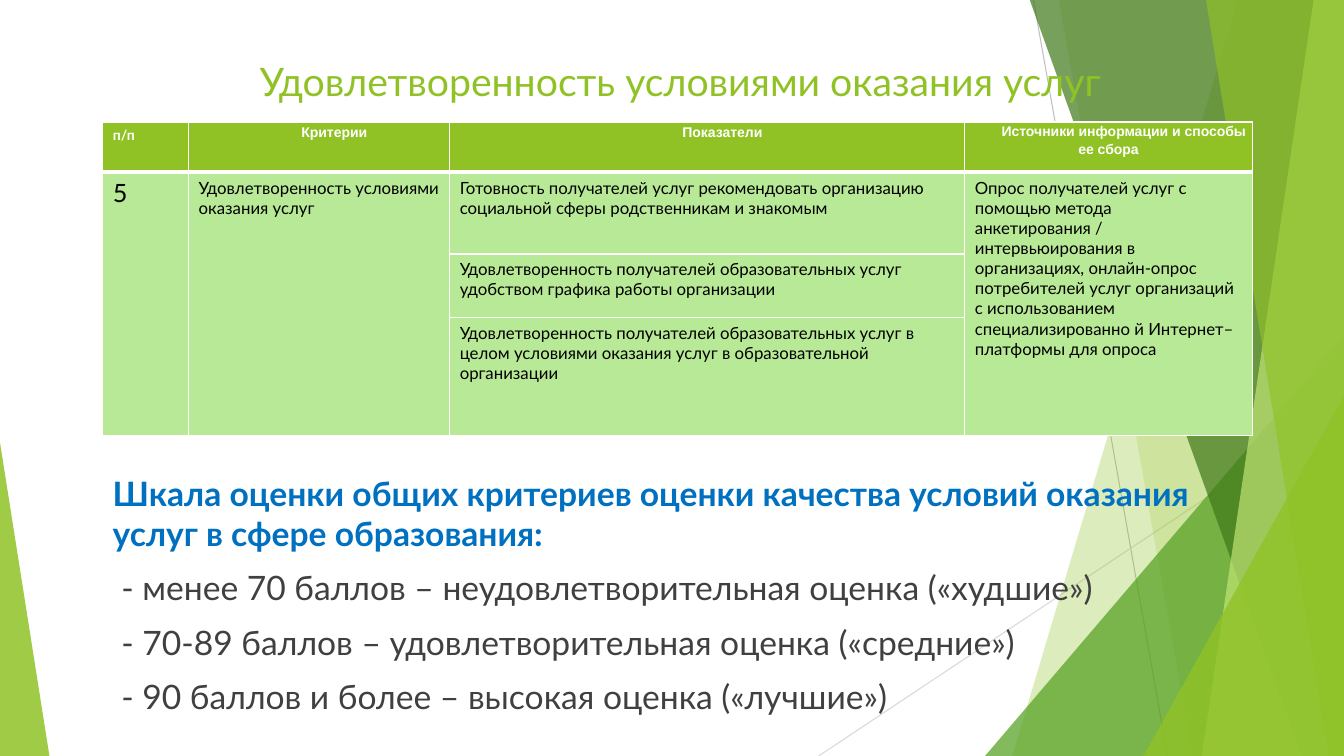
from dataclasses import dataclass

from lxml import etree
from pptx import Presentation
from pptx.dml.color import RGBColor
from pptx.enum.shapes import MSO_CONNECTOR, MSO_SHAPE
from pptx.enum.text import MSO_ANCHOR, PP_ALIGN
from pptx.oxml.ns import qn
from pptx.util import Inches, Pt

STRAIGHT = MSO_CONNECTOR.STRAIGHT
TRIANGLE = MSO_SHAPE.ISOSCELES_TRIANGLE
TOP, BOTTOM = MSO_ANCHOR.TOP, MSO_ANCHOR.BOTTOM
LEFT, CENTER = PP_ALIGN.LEFT, PP_ALIGN.CENTER

WIDTH, HEIGHT = 13.33, 7.5
BLEED_TOP = -0.01
COLORS = {
    "green": "90C226", "leaf": "54A021", "forest": "3F7819", "lime": "C0E474",
    "mint": "B7E996", "blue": "0070C0", "text": "404040", "black": "000000",
    "white": "FFFFFF", "gray": "BFBFBF", "light_gray": "D9D9D9",
}


@dataclass
class Ray:
    start: tuple[float, float]
    end: tuple[float, float]
    color: str


@dataclass
class Band:
    """Area between a slanted edge and the right side of the slide."""
    top_x: float
    bottom_x: float
    color: str
    opacity: int


@dataclass
class Corner:
    """Right triangle standing on the bottom edge; apex is 0 (left) or 1 (right)."""
    left: float
    top: float
    width: float
    apex: int
    color: str
    opacity: int


@dataclass
class Style:
    size: float
    color: str
    bold: bool = False
    font: str = "Lato"
    align: PP_ALIGN = LEFT
    spacing: float = 1.0
    indent: float = 0
    before: float = 0


DECOR = [
    Ray((10.25, 0), (11.58, HEIGHT), "gray"),
    Ray((WIDTH, 4.03), (8.12, HEIGHT), "light_gray"),
    Band(12.28, 10.04, "green", 30),
    Band(10.5, 11.83, "green", 20),
    Corner(9.77, 3.33, 3.56, 1, "leaf", 72),
    Band(10.21, 12.91, "forest", 70),
    Band(13.03, 11.92, "lime", 70),
    Band(11.96, 13.18, "green", 65),
    Corner(11.34, 3.93, 1.99, 1, "green", 80),
    Corner(0, 4.39, 0.49, 0, "green", 85),
]

TITLE = "Удовлетворенность условиями оказания услуг"
COLUMN_WIDTHS = [0.85, 2.59, 5.11, 2.85]
ROW_HEIGHTS = [0.5, 0.81, 0.63, 1.17]
HEADERS = ["п/п", "Критерии", "Показатели", "Источники информации и способы ее сбора"]
CRITERION_NUMBER = "5"
INDICATORS = [
    "Готовность получателей услуг рекомендовать организацию социальной сферы "
    "родственникам и знакомым",
    "Удовлетворенность получателей образовательных услуг удобством графика "
    "работы организации",
    "Удовлетворенность получателей образовательных услуг в целом условиями "
    "оказания услуг в образовательной организации",
]
SOURCES = (
    "Опрос получателей услуг с помощью метода анкетирования / интервьюирования "
    "в организациях, онлайн-опрос потребителей услуг организаций с использованием "
    "специализированно й Интернет– платформы для опроса"
)
SCALE_HEADING = ("Шкала оценки общих критериев оценки качества условий оказания "
                 "услуг в сфере образования:")
SCALE = [
    " - менее 70 баллов – неудовлетворительная оценка («худшие»)",
    " - 70-89 баллов – удовлетворительная оценка («средние»)",
    " - 90 баллов и более – высокая оценка («лучшие»)",
]


def rgb(color: str) -> RGBColor:
    return RGBColor.from_string(COLORS[color])


def paint(shape, color: str, opacity: int) -> None:
    shape.shadow.inherit = False
    shape.line.fill.background()
    shape.fill.solid()
    shape.fill.fore_color.rgb = rgb(color)
    srgb = shape.fill._xPr.find(".//" + qn("a:srgbClr"))
    etree.SubElement(srgb, qn("a:alpha"), val=str(opacity * 1000))


def draw_decor(shapes, item: Ray | Band | Corner) -> None:
    if isinstance(item, Ray):
        ray = shapes.add_connector(STRAIGHT, *map(Inches, item.start + item.end))
        ray.line.color.rgb = rgb(item.color)
        ray.line.width = Pt(0.75)
        etree.SubElement(ray._element.spPr, qn("a:effectLst"))
        return
    if isinstance(item, Band):
        outline = shapes.build_freeform(Inches(item.top_x), Inches(BLEED_TOP))
        corners = [(WIDTH, BLEED_TOP), (WIDTH, HEIGHT), (item.bottom_x, HEIGHT)]
        outline.add_line_segments([(Inches(x), Inches(y)) for x, y in corners])
        shape = outline.convert_to_shape()
    else:
        box = (item.left, item.top, item.width, HEIGHT - item.top)
        shape = shapes.add_shape(TRIANGLE, *map(Inches, box))
        shape.adjustments[0] = item.apex
    paint(shape, item.color, item.opacity)


def write(paragraph, text: str, style: Style) -> None:
    paragraph.alignment = style.align
    paragraph.line_spacing = style.spacing
    paragraph.space_before = Pt(style.before)
    if style.indent:
        paragraph._p.get_or_add_pPr().set("indent", str(Inches(style.indent)))
    run = paragraph.add_run()
    run.text = text
    run.font.size = Pt(style.size)
    run.font.name = style.font
    run.font.bold = style.bold
    run.font.color.rgb = rgb(style.color)


def add_text(shapes, box: tuple[float, ...], anchor: MSO_ANCHOR,
             lines: list[tuple[str, Style]]) -> None:
    frame = shapes.add_textbox(*map(Inches, box)).text_frame
    frame.word_wrap = True
    frame.vertical_anchor = anchor
    for i, (text, style) in enumerate(lines):
        write(frame.add_paragraph() if i else frame.paragraphs[0], text, style)


def format_cell(cell, fill: str, bottom_width: float) -> None:
    properties = cell._tc.get_or_add_tcPr()
    for side in ("lnL", "lnR", "lnT", "lnB"):
        width = Pt(bottom_width if side == "lnB" else 1)
        border = etree.SubElement(properties, qn(f"a:{side}"), w=str(width))
        solid = etree.SubElement(border, qn("a:solidFill"))
        etree.SubElement(solid, qn("a:srgbClr"), val=COLORS["white"])
    cell.fill.solid()
    cell.fill.fore_color.rgb = rgb(fill)


def add_criteria_table(shapes) -> None:
    box = (1.02, 1.21, sum(COLUMN_WIDTHS), sum(ROW_HEIGHTS))
    table = shapes.add_table(len(ROW_HEIGHTS), len(COLUMN_WIDTHS),
                             *map(Inches, box)).table
    for column, width in zip(table.columns, COLUMN_WIDTHS):
        column.width = Inches(width)
    for i, (row, height) in enumerate(zip(table.rows, ROW_HEIGHTS)):
        row.height = Inches(height)
        for cell in row.cells:
            format_cell(cell, "mint" if i else "green", 1 if i else 3)
    for col in (0, 1, 3):
        table.cell(1, col).merge(table.cell(len(INDICATORS), col))

    for col, header in enumerate(HEADERS):
        cell = table.cell(0, col)
        style = Style(10, "white", bold=True)
        if col:
            cell.margin_left = cell.margin_right = Inches(0.04)
            cell.margin_top = cell.margin_bottom = 0
            style = Style(10, "white", True, "Arial", CENTER,
                          1.15 if col == 3 else 1.2, 0.3)
        write(cell.text_frame.paragraphs[0], header, style)

    body = Style(12, "black")
    entries = [(1, 0, CRITERION_NUMBER, Style(18, "black")),
               (1, 1, TITLE, body), (1, 3, SOURCES, body)]
    entries += [(row, 2, text, body) for row, text in enumerate(INDICATORS, 1)]
    for row, col, text, style in entries:
        write(table.cell(row, col).text_frame.paragraphs[0], text, style)


def main() -> None:
    deck = Presentation()
    deck.slide_width, deck.slide_height = Inches(WIDTH), Inches(HEIGHT)
    shapes = deck.slides.add_slide(deck.slide_layouts[6]).shapes
    for item in DECOR:
        draw_decor(shapes, item)
    add_text(shapes, (0.92, 0.5, 11.65, 0.58), BOTTOM,
             [(TITLE, Style(28, "green", align=CENTER))])
    add_criteria_table(shapes)
    heading = Style(24, "blue", bold=True, before=10)
    grade = Style(24, "text", before=10)
    add_text(shapes, (1.02, 4.64, 11.4, 2.66), TOP,
             [(SCALE_HEADING, heading)] + [(text, grade) for text in SCALE])
    deck.save("out.pptx")


if __name__ == "__main__":
    main()
